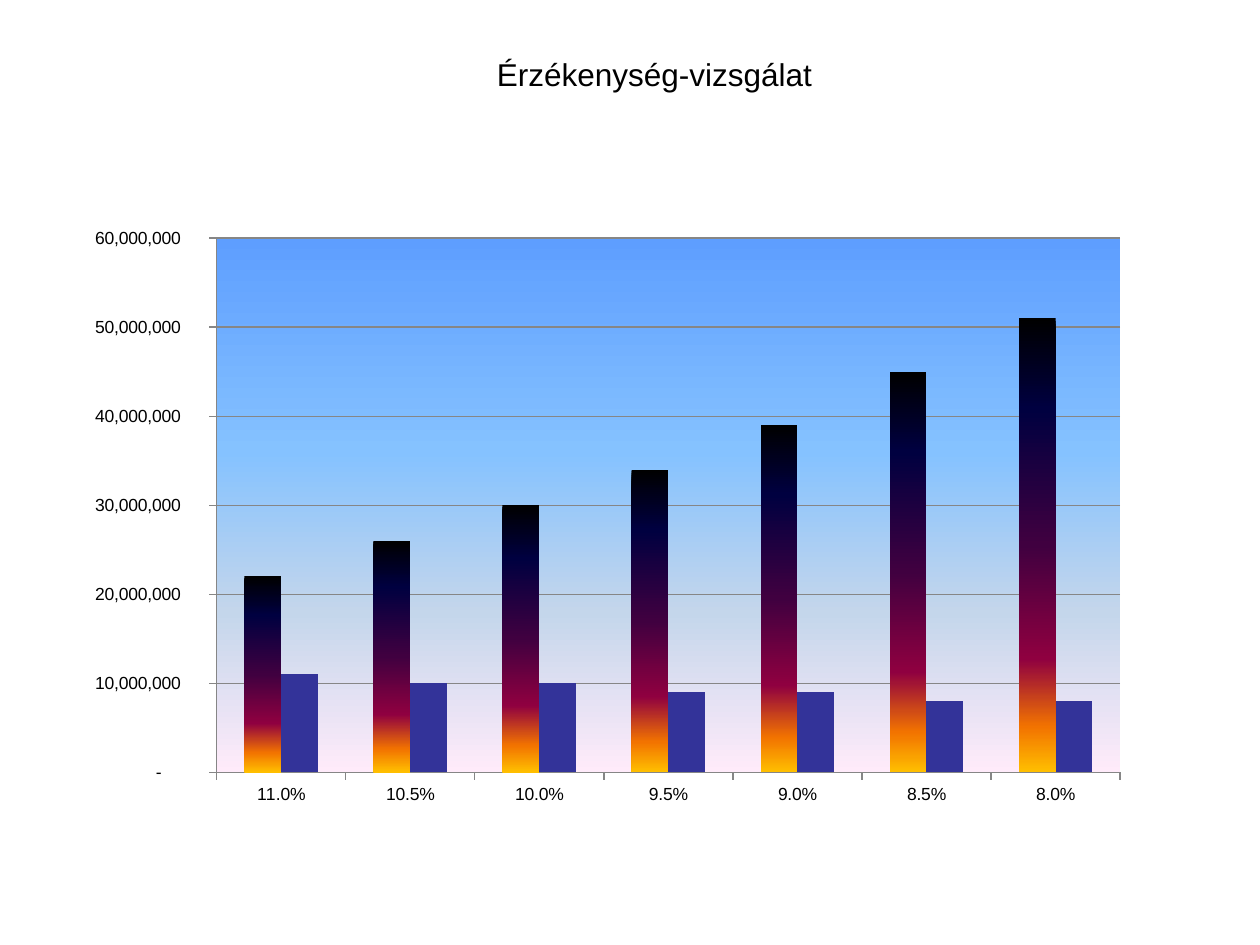
from pptx import Presentation
from pptx.chart.data import CategoryChartData as Data
from pptx.dml.color import RGBColor
from pptx.enum.chart import XL_CHART_TYPE as Kind, XL_TICK_MARK as Tick
from pptx.enum.text import MSO_ANCHOR as Anchor, PP_ALIGN as Align
from pptx.oxml import parse_xml
from pptx.oxml.ns import nsdecls
from pptx.util import Inches, Pt

BLACK = RGBColor(0x00, 0x00, 0x00)
GRAY = RGBColor(0x86, 0x86, 0x86)
NAVY = RGBColor(0x33, 0x33, 0x99)
SKY = [(0, RGBColor(0x5E, 0x9E, 0xFF)), (40, RGBColor(0x85, 0xC2, 0xFF)),
       (70, RGBColor(0xC4, 0xD6, 0xEB)), (100, RGBColor(0xFF, 0xEB, 0xFA))]
DUSK = [(0, BLACK), (20, RGBColor(0x00, 0x00, 0x40)),
        (50, RGBColor(0x40, 0x00, 0x40)), (75, RGBColor(0x8F, 0x00, 0x40)),
        (90, RGBColor(0xF2, 0x73, 0x00)), (100, RGBColor(0xFF, 0xBF, 0x00))]

RATES = [0.11, 0.105, 0.1, 0.095, 0.09, 0.085, 0.08]
MILLION = 1000000
HIGH = [n * MILLION for n in (22, 26, 30, 34, 39, 45, 51)]
LOW = [n * MILLION for n in (11, 10, 10, 9, 9, 8, 8)]
MONEY = (r'_-* #,##0\ _F_t_-;\-* #,##0\ _F_t_-;'
         r'_-* "-"??\ _F_t_-;_-@_-')


def fade(stops):
    """Shape properties with a top-to-bottom gradient and no edge."""
    marks = "".join(
        f'<a:gs pos="{pos * 1000}"><a:srgbClr val="{color}"/></a:gs>'
        for pos, color in stops)
    return parse_xml(
        f'<c:spPr {nsdecls("c", "a")}><a:gradFill rotWithShape="1">'
        f'<a:gsLst>{marks}</a:gsLst><a:lin ang="5400000" scaled="0"/>'
        '</a:gradFill><a:ln><a:noFill/></a:ln></c:spPr>')


def layout(frame, plot):
    """Inner plot box as shares of the chart frame, both given in inches."""
    left, top, wide, high = frame
    x, y, w, h = plot
    return parse_xml(
        f'<c:layout {nsdecls("c")}><c:manualLayout>'
        '<c:layoutTarget val="inner"/><c:xMode val="edge"/>'
        f'<c:yMode val="edge"/><c:x val="{(x - left) / wide}"/>'
        f'<c:y val="{(y - top) / high}"/><c:w val="{w / wide}"/>'
        f'<c:h val="{h / high}"/></c:manualLayout></c:layout>')


class Deck:
    def __init__(self, slide, font):
        self.slide = slide
        self.font = font

    def style(self, font, size):
        font.name = self.font
        font.size = Pt(size)
        font.bold = False
        font.color.rgb = BLACK

    def title(self, text, x, y, w, h):
        box = self.slide.shapes.title
        box.left, box.top = Inches(x), Inches(y)
        box.width, box.height = Inches(w), Inches(h)
        frame = box.text_frame
        frame.word_wrap = True
        frame.vertical_anchor = Anchor.TOP
        para = frame.paragraphs[0]
        para.alignment = Align.CENTER
        run = para.add_run()
        run.text = text
        self.style(run.font, 18)

    def axis(self, axis, form):
        axis.major_tick_mark = Tick.OUTSIDE
        axis.minor_tick_mark = Tick.NONE
        axis.format.line.color.rgb = GRAY
        labels = axis.tick_labels
        labels.number_format = form
        labels.number_format_is_linked = False
        self.style(labels.font, 10)

    def columns(self, frame, inner):
        data = Data(number_format="#,##0")
        data.categories = RATES
        data.categories.number_format = "0.0%"
        data.add_series("Series 1", HIGH)
        data.add_series("Series 2", LOW)
        chart = self.slide.shapes.add_chart(
            Kind.COLUMN_CLUSTERED, *map(Inches, frame), data).chart
        chart.has_title = False
        chart.has_legend = False
        self.style(chart.font, 10)

        self.axis(chart.category_axis, "0.0%")
        money = chart.value_axis
        self.axis(money, MONEY)
        money.minimum_scale, money.maximum_scale = 0, 60 * MILLION
        money.major_unit = 10 * MILLION
        money.has_major_gridlines = True
        money.major_gridlines.format.line.color.rgb = GRAY

        plot = chart.plots[0]
        plot.gap_width, plot.overlap = 150, 0
        plot.vary_by_categories = False
        high, low = plot.series
        high.format.fill.solid()
        props = high._element.spPr
        props.getparent().replace(props, fade(DUSK))
        low.format.fill.solid()
        low.format.fill.fore_color.rgb = NAVY

        area = chart._chartSpace.chart.plotArea
        for old in area.xpath("c:layout"):
            area.remove(old)
        area.insert(0, layout(frame, inner))
        area.append(fade(SKY))


def main():
    show = Presentation()
    show.slide_width, show.slide_height = Inches(10), Inches(7.5)
    deck = Deck(show.slides.add_slide(show.slide_layouts[5]), "Arial")
    deck.columns((0.55, 1.72, 8.52, 4.77), (1.72, 1.89, 7.17, 4.24))
    deck.title("Érzékenység-vizsgálat", 2.11, 0.39, 6.17, 0.4)
    show.save("out.pptx")


if __name__ == "__main__":
    main()
